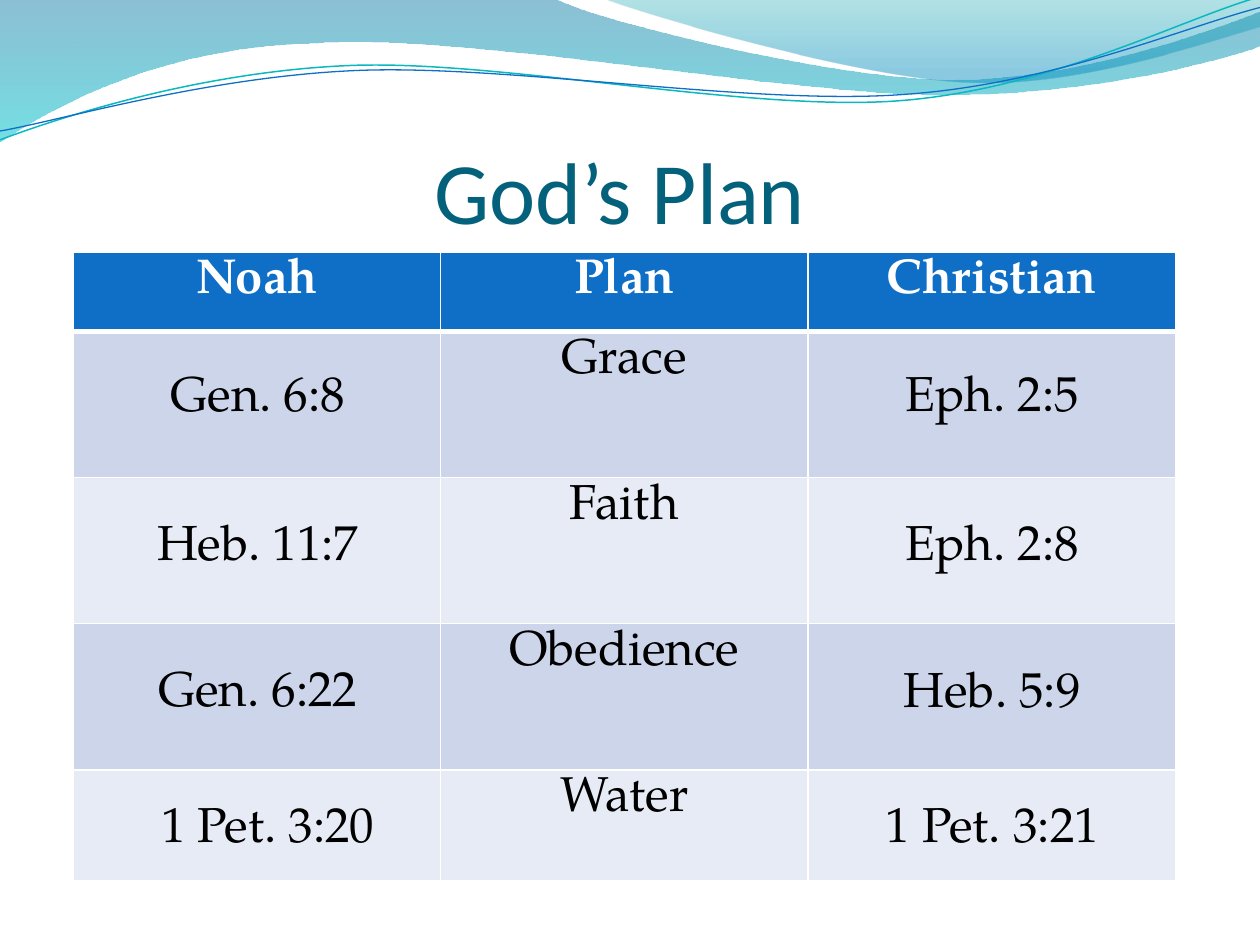
from math import cos, radians, sin

from lxml import etree
from pptx import Presentation
from pptx.dml.color import RGBColor
from pptx.enum.text import MSO_ANCHOR, MSO_AUTO_SIZE, PP_ALIGN
from pptx.oxml.ns import qn
from pptx.util import Inches, Pt

CENTER = PP_ALIGN.CENTER
TOP = MSO_ANCHOR.TOP
BOTTOM = MSO_ANCHOR.BOTTOM
GROW = MSO_AUTO_SIZE.SHAPE_TO_FIT_TEXT

COLORS = {
    "title": "04617B", "header": "0F6FC6", "white": "FFFFFF", "black": "000000",
    "band_dark": "CCD5EA", "band_light": "E7EBF5",
    "deep": "0074A1", "aqua": "00C6CF", "teal": "00A1A9", "sky": "008BBF",
    "teal_line": "0AB8BF", "blue_line": "0F6FC6",
}
BODY_FONT = "TeX Gyre Pagella"
CURVE_TILT = 2.7
HEADER_BORDERS = {"a:lnL": 1, "a:lnR": 1, "a:lnT": 1, "a:lnB": 3}

BROAD_WAVE = [
    (0, 0), (4.4, -0.01),
    (4.76, 0.17, 6.64, 0.63, 7.58, 0.63), (8.53, 0.63, 9.58, 0.26, 10, 0.09),
    (10.01, 0.36),
    (9.83, 0.44, 8.7, 0.76, 7.46, 0.75), (6.22, 0.75, 3.82, 0.28, 2.57, 0.34),
    (1.29, 0.36, 0.46, 0.83, -0.01, 1.13), (0, 0),
]
RIGHT_WAVE = [
    (4.79, -0.01),
    (5.09, 0.11, 6.82, 0.62, 7.69, 0.65), (8.56, 0.69, 9.61, 0.32, 10, 0.21),
    (10, 0), (4.79, -0.01),
]
TEAL_CURVE = [
    (0, 1.11),
    (0.48, 0.93, 1.58, 0.57, 2.77, 0.52), (3.95, 0.47, 5.93, 0.89, 7.13, 0.8),
    (8.33, 0.71, 9.38, 0.15, 9.98, -0.02),
]
BLUE_CURVE = [
    (0, 1.04),
    (0.47, 0.96, 1.64, 0.61, 2.83, 0.56), (4.03, 0.51, 5.97, 0.84, 7.17, 0.75),
    (8.36, 0.67, 9.41, 0.21, 10, 0.06),
]

PLAN_STEPS = ["Grace", "Faith", "Obedience", "Water"]
ROW_HEIGHTS = [0.63, 1.16, 1.16, 1.16, 0.88]
VERSES = [
    (0.67, 5.17, "Gen. 6:22"), (0.67, 4.01, "Heb. 11:7"),
    (0.75, 6.25, "1 Pet. 3:20"), (6.5, 6.25, "1 Pet. 3:21"),
    (6.5, 5.18, "Heb. 5:9"), (6.5, 4.01, "Eph. 2:8"),
    (6.5, 2.83, "Eph. 2:5"), (0.67, 2.83, "Gen. 6:8"),
]


def color(name):
    return RGBColor.from_string(COLORS[name])


def write_text(frame, text, *, size=28, font=BODY_FONT, ink="black", bold=False):
    para = frame.paragraphs[0]
    para.alignment = CENTER
    span = para.add_run()
    span.text = text
    span.font.size = Pt(size)
    span.font.name = font
    span.font.bold = bold
    span.font.color.rgb = color(ink)


def tilt(segment, center, degrees):
    angle = radians(degrees)
    middle_x, middle_y = center
    turned = []
    for x, y in zip(segment[::2], segment[1::2]):
        across, down = x - middle_x, y - middle_y
        turned += [middle_x + across * cos(angle) - down * sin(angle),
                   middle_y + across * sin(angle) + down * cos(angle)]
    return turned


def add_outline(page, segments, close):
    points = [(Inches(x), Inches(y)) for segment in segments
              for x, y in zip(segment[::2], segment[1::2])]
    builder = page.shapes.build_freeform(*points[0])
    builder.add_line_segments(points[1:], close=close)
    shape = builder.convert_to_shape()
    shape.shadow.inherit = False
    steps = iter(list(shape._element.spPr.iter(qn("a:lnTo"))))
    for segment in segments[1:]:
        step = next(steps)
        if len(segment) == 6:
            step.addprevious(curve := etree.Element(qn("a:cubicBezTo")))
            for handle in (step, next(steps), next(steps)):
                curve.append(handle[0])
                handle.getparent().remove(handle)
    return shape


def add_wave(page, segments, stops):
    shape = add_outline(page, segments, True)
    shape.line.fill.background()
    shape.fill.gradient()
    shape.fill.gradient_angle = 270
    for stop, (position, name, _) in zip(shape.fill.gradient_stops, stops):
        stop.position = position
        stop.color.rgb = color(name)
    tints = shape._element.spPr.iter(qn("a:srgbClr"))
    for tint, (_, _, opacity) in zip(tints, stops):
        etree.SubElement(tint, qn("a:alpha"), val=str(opacity * 1000))


def add_curve(page, segments, center, name, width):
    level = [tilt(segment, center, CURVE_TILT) for segment in segments]
    shape = add_outline(page, level, False)
    shape.rotation = -CURVE_TILT
    shape.fill.background()
    shape.line.color.rgb = color(name)
    shape.line.width = Pt(width)


def add_title(page, text):
    box = page.shapes.add_textbox(Inches(0.42), Inches(0.67), Inches(9), Inches(1.25))
    frame = box.text_frame
    frame.word_wrap = True
    frame.vertical_anchor = BOTTOM
    frame.margin_left = frame.margin_right = frame.margin_bottom = 0
    write_text(frame, text, size=50, font="Calibri", ink="title")


def add_borders(cell, widths):
    properties = cell._tc.get_or_add_tcPr()
    for index, (side, width) in enumerate(widths.items()):
        border = etree.Element(qn(side), w=str(Pt(width)))
        paint = etree.SubElement(border, qn("a:solidFill"))
        etree.SubElement(paint, qn("a:srgbClr"), val=COLORS["white"])
        properties.insert(index, border)


def add_plan_table(page):
    rows = [["Noah", "Plan", "Christian"]] + [["", step, ""] for step in PLAN_STEPS]
    table = page.shapes.add_table(
        len(rows), 3, Inches(0.58), Inches(2), Inches(8.75), Inches(sum(ROW_HEIGHTS))
    ).table
    for row, height in zip(table.rows, ROW_HEIGHTS):
        row.height = Inches(height)
    for row_index, row in enumerate(rows):
        header = row_index == 0
        band = "header" if header else "band_dark" if row_index % 2 else "band_light"
        for column_index, text in enumerate(row):
            cell = table.cell(row_index, column_index)
            cell.vertical_anchor = TOP
            cell.fill.solid()
            cell.fill.fore_color.rgb = color(band)
            if header:
                add_borders(cell, HEADER_BORDERS)
            if text:
                write_text(cell.text_frame, text, bold=header,
                           ink="white" if header else "black")


def add_verse(page, left, top, text):
    box = page.shapes.add_textbox(Inches(left), Inches(top), Inches(2.75), Inches(0.57))
    box.text_frame.word_wrap = True
    box.text_frame.auto_size = GROW
    write_text(box.text_frame, text)


def main():
    deck = Presentation()
    deck.slide_width, deck.slide_height = Inches(10), Inches(7.5)
    page = deck.slides.add_slide(deck.slide_layouts[6])
    add_wave(page, BROAD_WAVE, [(0, "deep", 45), (1, "aqua", 55)])
    add_wave(page, RIGHT_WAVE, [(0, "teal", 30), (0.8, "sky", 45)])
    add_curve(page, TEAL_CURVE, (4.99, 0.58), "teal_line", 0.85)
    add_curve(page, BLUE_CURVE, (5, 0.59), "blue_line", 0.75)
    add_title(page, "God’s Plan")
    add_plan_table(page)
    for left, top, text in VERSES:
        add_verse(page, left, top, text)
    deck.save("out.pptx")


if __name__ == "__main__":
    main()
